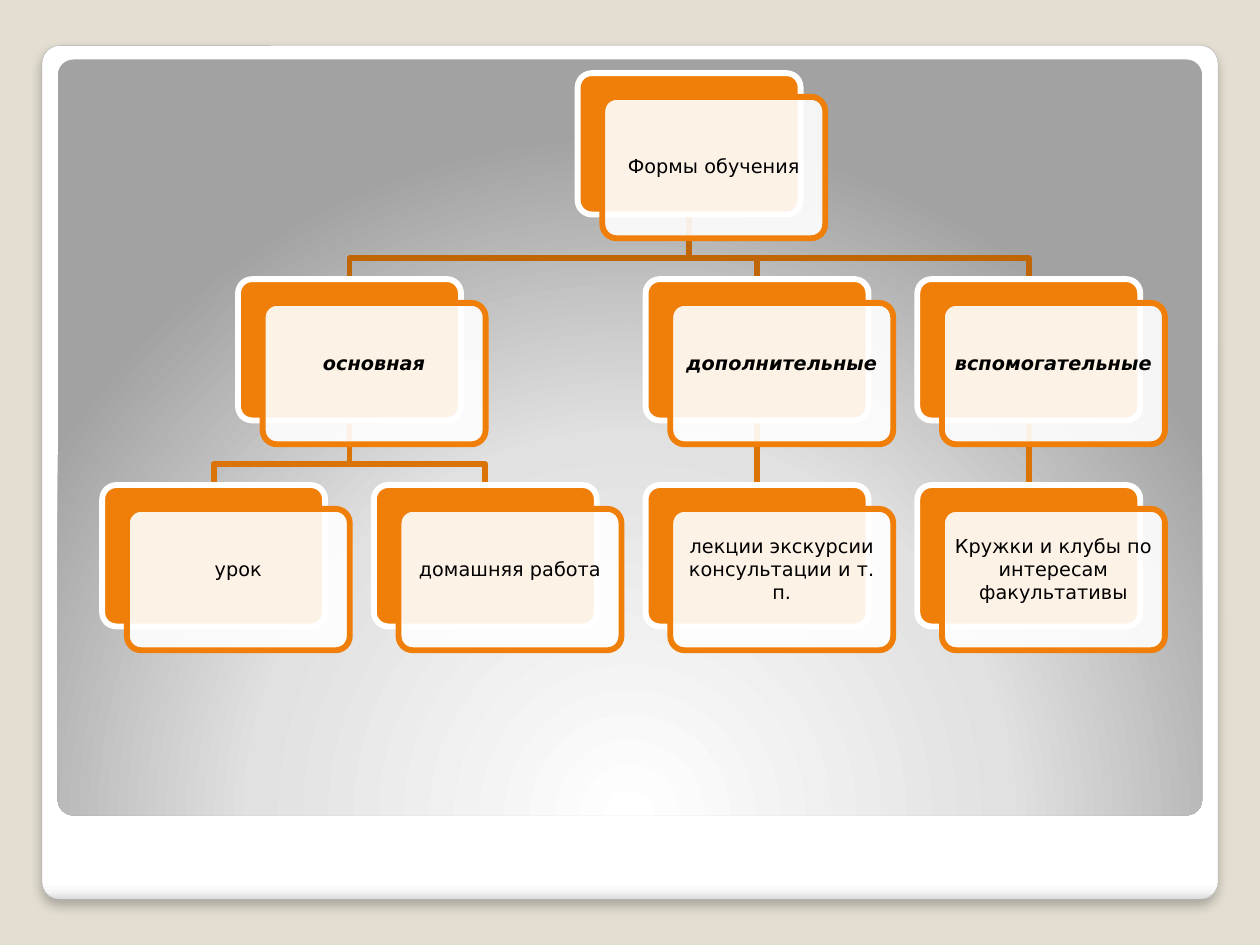
from lxml import etree
from pptx import Presentation
from pptx.dml.color import RGBColor
from pptx.enum.shapes import MSO_CONNECTOR, MSO_SHAPE
from pptx.enum.text import MSO_ANCHOR, PP_ALIGN
from pptx.oxml import parse_xml
from pptx.oxml.ns import nsdecls, qn
from pptx.util import Pt

BEIGE = RGBColor(0xE3, 0xDE, 0xD1)
WHITE = RGBColor(0xFF, 0xFF, 0xFF)
BLACK = RGBColor(0x00, 0x00, 0x00)
FRAME_GRAY = RGBColor(0xA4, 0xA4, 0xA4)
ORANGE = RGBColor(0xF0, 0x7F, 0x09)
DARK_ORANGE = RGBColor(0xC0, 0x66, 0x07)
MID_ORANGE = RGBColor(0xDA, 0x73, 0x08)

FONT = "DejaVu Sans"
LINE_WIDTH = 3.35
CARD_WIDTH, CARD_HEIGHT = 127.4, 80.8
SHIFT_X, SHIFT_Y = 14.1, 13.6  # front card against back card

# Name: (text, column, row, parent)
NODES = {
    "root": ("Формы обучения", 1.75, 0, None),
    "main": ("основная", 0.5, 1, "root"),
    "lesson": ("урок", 0, 2, "main"),
    "homework": ("домашняя работа", 1, 2, "main"),
    "extra": ("дополнительные", 2, 1, "root"),
    "lectures": ("лекции экскурсии консультации и т. п.", 2, 2, "extra"),
    "support": ("вспомогательные", 3, 1, "root"),
    "clubs": ("Кружки и клубы по интересам факультативы", 3, 2, "support"),
}


def add_round_box(slide, left, top, width, height, radius):
    shape = slide.shapes.add_shape(
        MSO_SHAPE.ROUNDED_RECTANGLE, Pt(left), Pt(top), Pt(width), Pt(height))
    shape.adjustments[0] = radius
    shape.shadow.inherit = False
    return shape


def set_gradient(shape, stops, direction):
    shape.fill.gradient()
    old = shape._element.spPr.find(qn("a:gradFill"))
    stop_xml = "".join(
        f'<a:gs pos="{position * 1000}"><a:srgbClr val="{color}"/></a:gs>'
        for position, color in stops)
    new = parse_xml(f'<a:gradFill {nsdecls("a")} rotWithShape="1">'
                    f'<a:gsLst>{stop_xml}</a:gsLst>{direction}</a:gradFill>')
    old.getparent().replace(old, new)


def add_frame(slide, left, top, width, height):
    # White sheet with a soft shadow
    sheet = add_round_box(slide, left, top, width, height, 0.021)
    set_gradient(sheet, [(0, "FFFFFF"), (98, "FFFFFF"), (99, "F7F7F7"), (100, "DADADA")],
                 '<a:lin ang="5400000" scaled="0"/>')
    sheet.line.color.rgb = FRAME_GRAY
    sheet.line.width = Pt(0.16)
    effects = sheet._element.spPr.find(qn("a:effectLst"))
    effects.append(parse_xml(
        f'<a:outerShdw {nsdecls("a")} blurRad="{Pt(6)}" dist="{Pt(4)}" dir="5400000">'
        '<a:srgbClr val="000000"><a:alpha val="25000"/></a:srgbClr></a:outerShdw>'))

    # Gray panel lit from below
    panel = add_round_box(slide, left + 9, top + 8, width - 18, 432, 0.021)
    set_gradient(panel, [(0, "FFFFFF"), (55, "E1E1E1"), (100, "A2A2A2")],
                 '<a:path path="circle"><a:fillToRect l="50000" t="175000" '
                 'r="50000" b="-75000"/></a:path>')
    panel.line.fill.background()


def add_branch(slide, start, end, color):
    (start_x, start_y), (end_x, end_y) = start, end
    if start_x == end_x:
        branch = slide.shapes.add_connector(
            MSO_CONNECTOR.STRAIGHT, Pt(start_x), Pt(start_y), Pt(end_x), Pt(end_y))
        etree.SubElement(branch._element.spPr, qn("a:effectLst"))
    else:
        bend_y = start_y + (end_y - start_y) * 0.68
        builder = slide.shapes.build_freeform(Pt(start_x), Pt(start_y))
        corners = [(start_x, bend_y), (end_x, bend_y), (end_x, end_y)]
        builder.add_line_segments([(Pt(x), Pt(y)) for x, y in corners], close=False)
        branch = builder.convert_to_shape()
        branch.fill.background()
        branch.shadow.inherit = False
    branch.line.color.rgb = color
    branch.line.width = Pt(LINE_WIDTH)


def add_card(slide, left, top, text, row):
    # Orange back card
    back = add_round_box(slide, left, top, CARD_WIDTH, CARD_HEIGHT, 0.1)
    back.fill.solid()
    back.fill.fore_color.rgb = ORANGE
    back.line.color.rgb = WHITE
    back.line.width = Pt(LINE_WIDTH)

    # Translucent front card with the text
    front = add_round_box(slide, left + SHIFT_X, top + SHIFT_Y, CARD_WIDTH, CARD_HEIGHT, 0.1)
    front.fill.solid()
    front.fill.fore_color.rgb = WHITE
    color = front._element.spPr.find(qn("a:solidFill")).find(qn("a:srgbClr"))
    etree.SubElement(color, qn("a:alpha"), val="90000")
    front.line.color.rgb = ORANGE
    front.line.width = Pt(LINE_WIDTH)

    frame = front.text_frame
    frame.text = text
    frame.word_wrap = True
    frame.vertical_anchor = MSO_ANCHOR.MIDDLE
    frame.margin_left = frame.margin_right = frame.margin_top = Pt(3.6)
    frame.margin_bottom = Pt(3.6 if row == 0 else 15.6)
    paragraph = frame.paragraphs[0]
    paragraph.alignment = PP_ALIGN.CENTER
    if row == 0:
        paragraph.line_spacing = 0.9
    font = paragraph.runs[0].font
    font.name = FONT
    font.size = Pt(11)
    font.color.rgb = BLACK
    font.bold = font.italic = row == 1


def add_hierarchy(slide, left, top, width, height):
    column_step = (width - CARD_WIDTH - SHIFT_X) / 3
    row_step = (height - CARD_HEIGHT - SHIFT_Y) / 2
    places = {name: (left + column * column_step, top + row * row_step)
              for name, (_, column, row, _) in NODES.items()}

    # Branches behind the cards
    for name, (_, _, row, parent) in NODES.items():
        if parent:
            (parent_x, parent_y), (x, y) = places[parent], places[name]
            add_branch(slide, (parent_x + CARD_WIDTH / 2, parent_y + CARD_HEIGHT),
                       (x + CARD_WIDTH / 2, y), DARK_ORANGE if row == 1 else MID_ORANGE)

    for name, (text, _, row, _) in NODES.items():
        add_card(slide, *places[name], text, row)


def main():
    presentation = Presentation()
    presentation.slide_width, presentation.slide_height = Pt(720), Pt(540)
    slide = presentation.slides.add_slide(presentation.slide_layouts[6])
    slide.background.fill.solid()
    slide.background.fill.fore_color.rgb = BEIGE
    add_frame(slide, 24, 26, 672, 488)
    add_hierarchy(slide, 58.4, 41.8, 607.3, 329.8)
    presentation.save("out.pptx")


if __name__ == "__main__":
    main()
